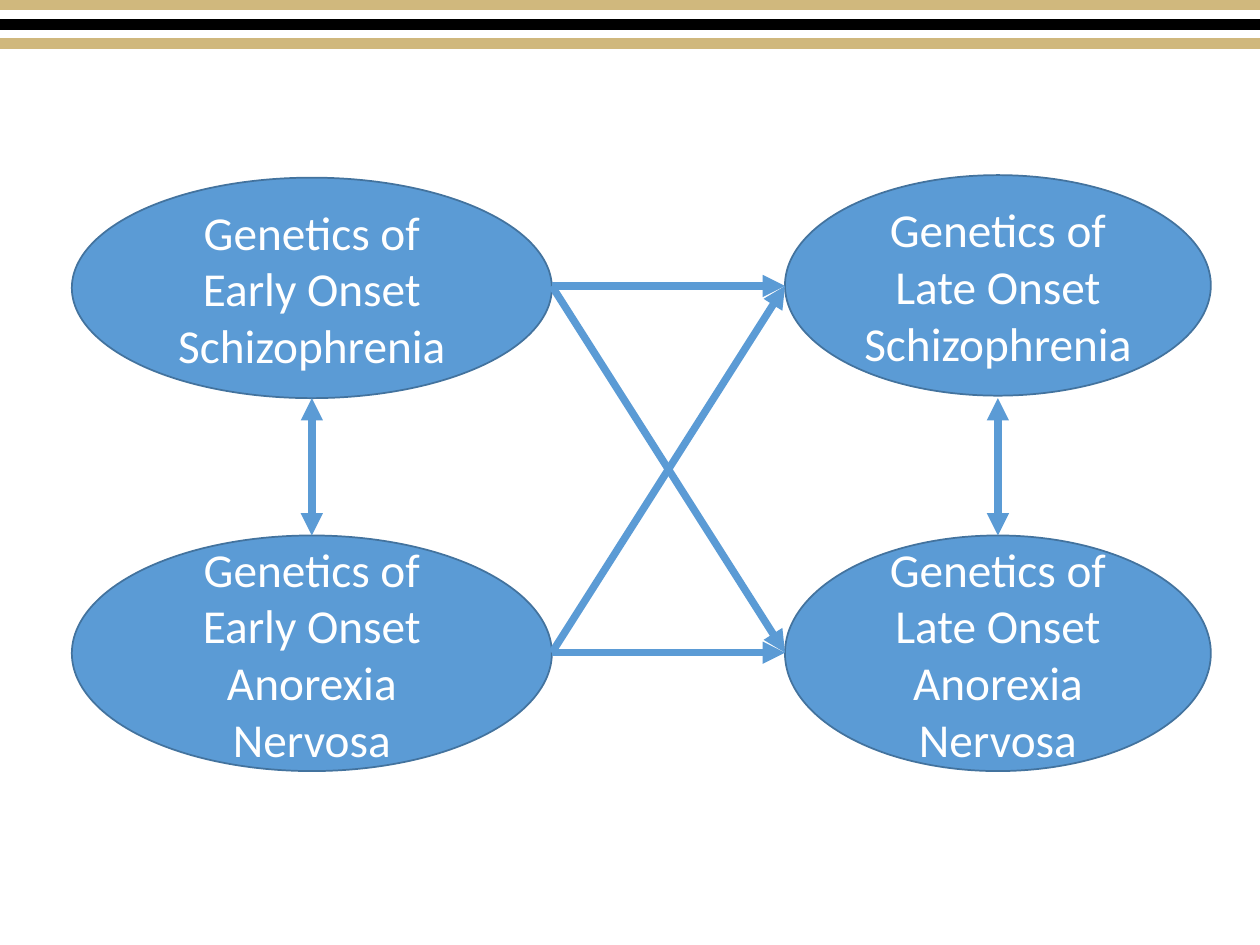
"""Build a slide of genetic paths between early and late onset disorders."""
from lxml import etree
from pptx import Presentation
from pptx.dml.color import RGBColor
from pptx.enum.shapes import MSO_CONNECTOR, MSO_SHAPE
from pptx.enum.text import MSO_ANCHOR, PP_ALIGN
from pptx.oxml.ns import qn
from pptx.util import Inches, Pt

RECTANGLE, OVAL = MSO_SHAPE.RECTANGLE, MSO_SHAPE.OVAL
STRAIGHT = MSO_CONNECTOR.STRAIGHT
MIDDLE, CENTER = MSO_ANCHOR.MIDDLE, PP_ALIGN.CENTER
COLORS = {"gold": "D0B87D", "black": "000000", "blue": "5B9BD5",
          "outline": "43739E", "white": "FFFFFF"}

deck = Presentation()
deck.slide_width, deck.slide_height = Inches(10), Inches(7.5)
page = deck.slides.add_slide(deck.slide_layouts[6])


def add_filled_shape(kind, left, top, width, height, fill, line):
    shape = page.shapes.add_shape(
        kind, Inches(left), Inches(top), Inches(width), Inches(height))
    shape.shadow.inherit = False
    shape.fill.solid()
    shape.fill.fore_color.rgb = RGBColor.from_string(COLORS[fill])
    shape.line.color.rgb = RGBColor.from_string(COLORS[line])
    shape.line.width = Pt(1)
    return shape


def add_arrow(start, end, ends):
    arrow = page.shapes.add_connector(
        STRAIGHT, *[Inches(length) for length in (*start, *end)])
    arrow.line.color.rgb = RGBColor.from_string(COLORS["blue"])
    arrow.line.width = Pt(4.25)
    properties = arrow._element.spPr
    outline = properties.find(qn("a:ln"))
    for name in ends:
        etree.SubElement(outline, qn(f"a:{name}"), type="triangle")
    etree.SubElement(properties, qn("a:effectLst"))


for top, color in ((0, "gold"), (0.31, "gold"), (0.16, "black")):
    add_filled_shape(RECTANGLE, 0, top, 10, 0.07, color, color)

EARLY_LEFT, EARLY_WIDTH = 0.57, 3.81
LATE_LEFT, LATE_WIDTH = 6.23, 3.38
LOWER_TOP, LOWER_HEIGHT = 4.25, 1.87
UPPER_HEIGHT = 1.75
factors = [
    ("Early", "Schizophrenia", EARLY_LEFT, 1.41, EARLY_WIDTH, UPPER_HEIGHT),
    ("Late", "Schizophrenia", LATE_LEFT, 1.39, LATE_WIDTH, UPPER_HEIGHT),
    ("Late", "Anorexia Nervosa", LATE_LEFT, LOWER_TOP, LATE_WIDTH, LOWER_HEIGHT),
    ("Early", "Anorexia Nervosa", EARLY_LEFT, LOWER_TOP, EARLY_WIDTH, LOWER_HEIGHT),
]
for onset, disorder, left, top, width, height in factors:
    oval = add_filled_shape(OVAL, left, top, width, height, "blue", "outline")
    frame = oval.text_frame
    frame.word_wrap = True
    frame.vertical_anchor = MIDDLE
    frame.margin_left = frame.margin_right = Inches(0.1)
    frame.margin_top = frame.margin_bottom = Inches(0.04)
    para = frame.paragraphs[0]
    para.alignment = CENTER
    span = para.add_run()
    span.text = f"Genetics of {onset} Onset {disorder}"
    span.font.name = "Calibri"
    span.font.size = Pt(27)
    span.font.color.rgb = RGBColor.from_string(COLORS["white"])

rows = (2.27, 5.18)
for start_row in rows:
    for end_row in rows:
        add_arrow((EARLY_LEFT + EARLY_WIDTH, start_row), (LATE_LEFT, end_row),
                  ("tailEnd",))

for left, width in ((EARLY_LEFT, EARLY_WIDTH), (LATE_LEFT, LATE_WIDTH)):
    center = left + width / 2
    add_arrow((center, 3.16), (center, LOWER_TOP), ("headEnd", "tailEnd"))

deck.save("out.pptx")
